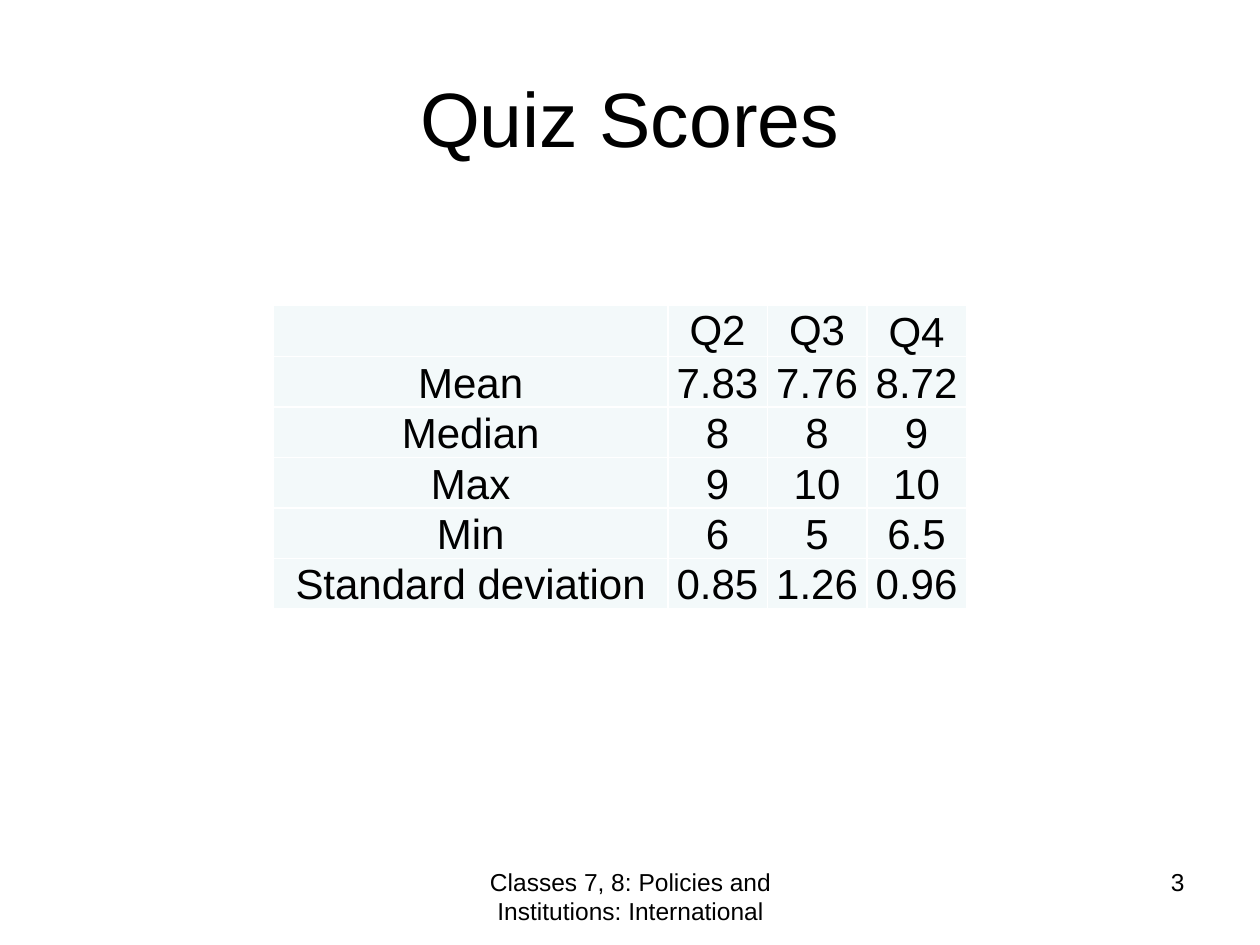
from lxml import etree
from pptx import Presentation
from pptx.dml.color import RGBColor
from pptx.enum.text import MSO_ANCHOR, PP_ALIGN
from pptx.oxml.ns import qn
from pptx.util import Inches, Pt

TOP, MID, LOW = MSO_ANCHOR.TOP, MSO_ANCHOR.MIDDLE, MSO_ANCHOR.BOTTOM
MID_X, RIGHT = PP_ALIGN.CENTER, PP_ALIGN.RIGHT

WIDE, HIGH = 10, 7.5
HUES = {"ink": "000000", "cell": "F3F9FA", "rule": "FFFFFF"}
FACE = "Arial"

TEXTS = [
    ("Quiz Scores", (0.5, 0.3, 9, 1.25), 44, MID_X, MID),
    ("Classes 7, 8: Policies and Institutions: International",
     (3.42, 6.83, 3.17, 0.52), 14, MID_X, TOP),
    ("3", (7.17, 6.83, 2.33, 0.52), 14, RIGHT, TOP),
]
SCORES = [
    ("", "Q2", "Q3", "Q4"),
    ("Mean", "7.83", "7.76", "8.72"),
    ("Median", "8", "8", "9"),
    ("Max", "9", "10", "10"),
    ("Min", "6", "5", "6.5"),
    ("Standard deviation", "0.85", "1.26", "0.96"),
]
COLS = [3.13] + [0.79] * 3
ROWS = [0.41] + [0.38] * 5
SPOT = (2.17, 2.42)
CELL = {
    "margin_left": Inches(0.01),
    "margin_right": Inches(0.01),
    "margin_top": 0,
    "margin_bottom": 0,
}


def apply(item, form):
    for key, val in form.items():
        setattr(item, key, val)


def write(frame, text, size, align):
    para = frame.paragraphs[0]
    para.alignment = align
    if text:
        run = para.add_run()
        run.text = text
        apply(run.font, {"name": FACE, "size": Pt(size)})
        run.font.color.rgb = RGBColor.from_string(HUES["ink"])


def edge(cell):
    props = cell._tc.get_or_add_tcPr()
    for spot, side in enumerate(("lnL", "lnR", "lnT", "lnB")):
        line = etree.Element(qn(f"a:{side}"), w=str(Pt(1)))
        fill = etree.SubElement(line, qn("a:solidFill"))
        etree.SubElement(fill, qn("a:srgbClr"), val=HUES["rule"])
        props.insert(spot, line)


def add_text(slide, text, area, size, align, anchor):
    box = slide.shapes.add_textbox(*map(Inches, area))
    apply(box.text_frame, {"word_wrap": True, "vertical_anchor": anchor})
    write(box.text_frame, text, size, align)


def add_scores(slide):
    area = (*SPOT, sum(COLS), sum(ROWS))
    grid = slide.shapes.add_table(
        len(ROWS), len(COLS), *map(Inches, area)).table
    apply(grid, {"first_row": False, "horz_banding": False})
    for col, width in zip(grid.columns, COLS):
        col.width = Inches(width)
    for row, height in zip(grid.rows, ROWS):
        row.height = Inches(height)
    for r, line in enumerate(SCORES):
        for c, text in enumerate(line):
            cell = grid.cell(r, c)
            anchor = MID if r == 0 and c < len(COLS) - 1 else LOW
            apply(cell, {**CELL, "vertical_anchor": anchor})
            cell.fill.solid()
            cell.fill.fore_color.rgb = RGBColor.from_string(HUES["cell"])
            edge(cell)
            write(cell.text_frame, text, 24, MID_X)


def main():
    deck = Presentation()
    apply(deck, {"slide_width": Inches(WIDE), "slide_height": Inches(HIGH)})
    slide = deck.slides.add_slide(deck.slide_layouts[6])
    for part in TEXTS:
        add_text(slide, *part)
    add_scores(slide)
    deck.save("out.pptx")


if __name__ == "__main__":
    main()
